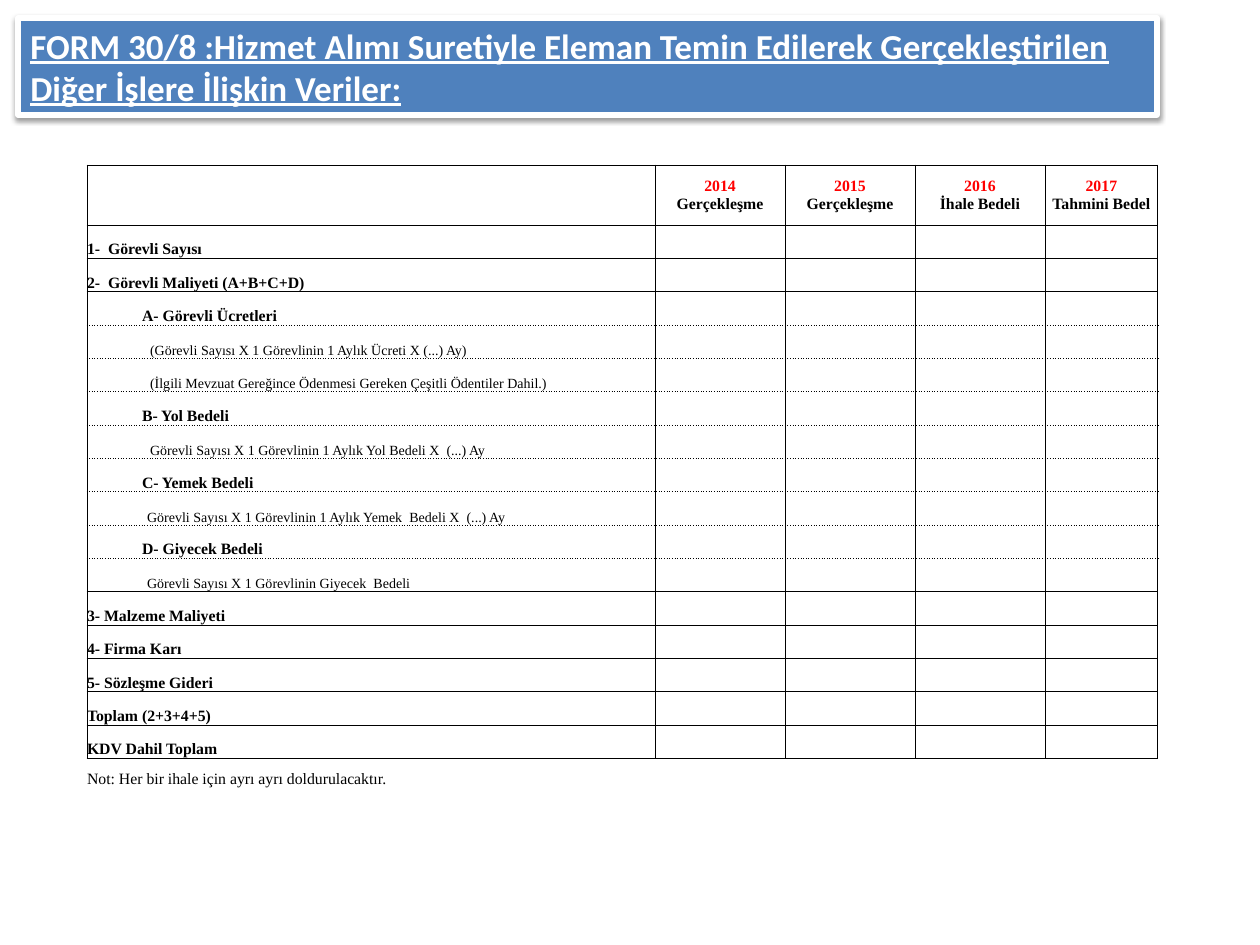
from copy import deepcopy
from dataclasses import dataclass

from lxml import etree
from pptx import Presentation
from pptx.dml.color import RGBColor
from pptx.enum.shapes import MSO_SHAPE
from pptx.enum.text import MSO_ANCHOR, MSO_AUTO_SIZE, PP_ALIGN
from pptx.oxml import parse_xml
from pptx.oxml.ns import qn
from pptx.util import Emu, Pt

RECT = MSO_SHAPE.RECTANGLE
GROW = MSO_AUTO_SIZE.SHAPE_TO_FIT_TEXT
TOP, MIDDLE, BOTTOM = MSO_ANCHOR.TOP, MSO_ANCHOR.MIDDLE, MSO_ANCHOR.BOTTOM
LEFT, CENTER = PP_ALIGN.LEFT, PP_ALIGN.CENTER
NS = 'xmlns:a="http://schemas.openxmlformats.org/drawingml/2006/main"'


@dataclass(frozen=True)
class Theme:
    """Colours, fonts and type sizes of the slide."""
    blue: str = "4F81BD"
    white: str = "FFFFFF"
    black: str = "000000"
    red: str = "FF0000"
    head: str = "Calibri"
    body: str = "Times New Roman"
    title: int = 20
    label: int = 9
    detail: int = 8
    frame: float = 3
    rule: float = 0.5


THEME = Theme()
TITLE = ("FORM 30/8 :Hizmet Alımı Suretiyle Eleman Temin Edilerek "
         "Gerçekleştirilen Diğer İşlere İlişkin Veriler:")
YEARS = [("2014", "Gerçekleşme"), ("2015", "Gerçekleşme"),
         ("2016", "İhale Bedeli"), ("2017", "Tahmini Bedel")]
COLS = [568, 130, 130, 130, 113]
HEAD, BODY, FOOT = 60, 534, 30
ITEM, WIDE, NEAR = 55, 63, 60
ROWS = [
    ("1-  Görevli Sayısı", 0),
    ("2-  Görevli Maliyeti (A+B+C+D)", 0),
    ("A- Görevli Ücretleri", ITEM),
    ("(Görevli Sayısı X 1 Görevlinin 1 Aylık Ücreti X (...) Ay)", WIDE),
    ("(İlgili Mevzuat Gereğince Ödenmesi Gereken Çeşitli Ödentiler Dahil.)", WIDE),
    ("B- Yol Bedeli", ITEM),
    ("Görevli Sayısı X 1 Görevlinin 1 Aylık Yol Bedeli X  (...) Ay", WIDE),
    ("C- Yemek Bedeli", ITEM),
    ("Görevli Sayısı X 1 Görevlinin 1 Aylık Yemek  Bedeli X  (...) Ay", NEAR),
    ("D- Giyecek Bedeli", ITEM),
    ("Görevli Sayısı X 1 Görevlinin Giyecek  Bedeli", NEAR),
    ("3- Malzeme Maliyeti", 0),
    ("4- Firma Karı", 0),
    ("5- Sözleşme Gideri", 0),
    ("Toplam (2+3+4+5)", 0),
    ("KDV Dahil Toplam", 0),
]
NOTE = "Not: Her bir ihale için ayrı ayrı doldurulacaktır."


def px(n):
    """Turn pixels into EMU."""
    return Emu(round(n * 914400 / 126))


def style(run, font, size, color, bold):
    """Format one run."""
    run.font.name = font
    run.font.size = Pt(size)
    run.font.bold = bold
    run.font.color.rgb = RGBColor.from_string(color)


def add_title(slide):
    """Draw the framed title bar with its soft shadow."""
    bar = slide.shapes.add_shape(RECT, px(18), px(18), px(1139), px(97))
    bar.fill.solid()
    bar.fill.fore_color.rgb = RGBColor.from_string(THEME.blue)
    bar.line.color.rgb = RGBColor.from_string(THEME.white)
    bar.line.width = Pt(THEME.frame)
    bar.shadow.inherit = False
    glow = bar.element.spPr.find(qn("a:effectLst"))
    glow.append(parse_xml(
        f'<a:outerShdw {NS} blurRad="{Pt(3.1)}" dist="{Pt(1.6)}" dir="5400000" '
        f'rotWithShape="0"><a:srgbClr val="{THEME.black}"><a:alpha val="38000"/>'
        '</a:srgbClr></a:outerShdw>'))
    frame = bar.text_frame
    frame.text = TITLE
    frame.word_wrap = True
    frame.auto_size = GROW
    frame.vertical_anchor = TOP
    para = frame.paragraphs[0]
    para.alignment = LEFT
    style(para.runs[0], THEME.head, THEME.title, THEME.white, True)
    para.runs[0].font.underline = True


def set_edge(cell, side, kind):
    """Give one cell edge a solid, dotted or hidden line."""
    if kind:
        ink = (f'<a:solidFill><a:srgbClr val="{THEME.black}"/></a:solidFill>'
               f'<a:prstDash val="{kind}"/>')
    else:
        ink = "<a:noFill/>"
    props = cell._tc.get_or_add_tcPr()
    props.append(parse_xml(
        f'<a:ln{side} {NS} w="{Pt(THEME.rule)}">{ink}</a:ln{side}>'))


def set_base(cell, top, side, low):
    """Clear a cell's fill and margins and draw its edges."""
    for name, kind in zip("LRTB", (side, side, top, low)):
        set_edge(cell, name, kind)
    cell.fill.background()
    cell.margin_left = cell.margin_right = 0
    cell.margin_top = cell.margin_bottom = 0
    cell.vertical_anchor = BOTTOM
    para = cell.text_frame.paragraphs[0]
    end = etree.SubElement(para._p, qn("a:endParaRPr"))
    end.set("sz", str(THEME.label * 100))


def set_year(cell, year, label):
    """Write a year in red above its label."""
    cell.vertical_anchor = MIDDLE
    para = cell.text_frame.paragraphs[0]
    para.text = f"{year}\v{label}"
    para.alignment = CENTER
    for run, color in zip(para.runs, (THEME.red, THEME.black)):
        style(run, THEME.body, THEME.label, color, True)
    gap = para._p.find(qn("a:br"))
    gap.append(deepcopy(para.runs[0]._r.rPr))


def set_label(cell, text, indent, size, bold):
    """Write an indented row label."""
    para = cell.text_frame.paragraphs[0]
    para.text = text
    para.alignment = LEFT
    para._p.get_or_add_pPr().set("marL", str(px(indent)))
    style(para.runs[0], THEME.body, size, THEME.black, bold)


def add_grid(slide):
    """Build the cost table with its closing note."""
    count = len(ROWS) + 2
    shape = slide.shapes.add_table(count, len(COLS), px(87), px(165),
                                   px(sum(COLS)), px(HEAD + BODY + FOOT))
    table = shape.table
    table.first_row = table.horz_banding = False
    for col, width in zip(table.columns, COLS):
        col.width = px(width)
    steps = [HEAD] + [BODY / len(ROWS)] * len(ROWS) + [FOOT]
    inner = [0] + [indent for _, indent in ROWS] + [0]
    rules = ["solid"] + ["dot" if a and b else "solid"
                         for a, b in zip(inner, inner[1:])] + [None]
    for i, (row, step) in enumerate(zip(table.rows, steps)):
        row.height = px(step)
        side = "solid" if i < count - 1 else None
        for cell in row.cells:
            set_base(cell, rules[i], side, rules[i + 1])
    for i, (year, label) in enumerate(YEARS, 1):
        set_year(table.cell(0, i), year, label)
    for i, (text, indent) in enumerate(ROWS, 1):
        bold = indent in (0, ITEM)
        size = THEME.label if bold else THEME.detail
        set_label(table.cell(i, 0), text, indent, size, bold)
    set_label(table.cell(count - 1, 0), NOTE, 0, THEME.label, False)


def main():
    """Build and save the slide."""
    deck = Presentation()
    deck.slide_width, deck.slide_height = px(1260), px(945)
    slide = deck.slides.add_slide(deck.slide_layouts[6])
    add_title(slide)
    add_grid(slide)
    deck.save("out.pptx")


if __name__ == "__main__":
    main()
